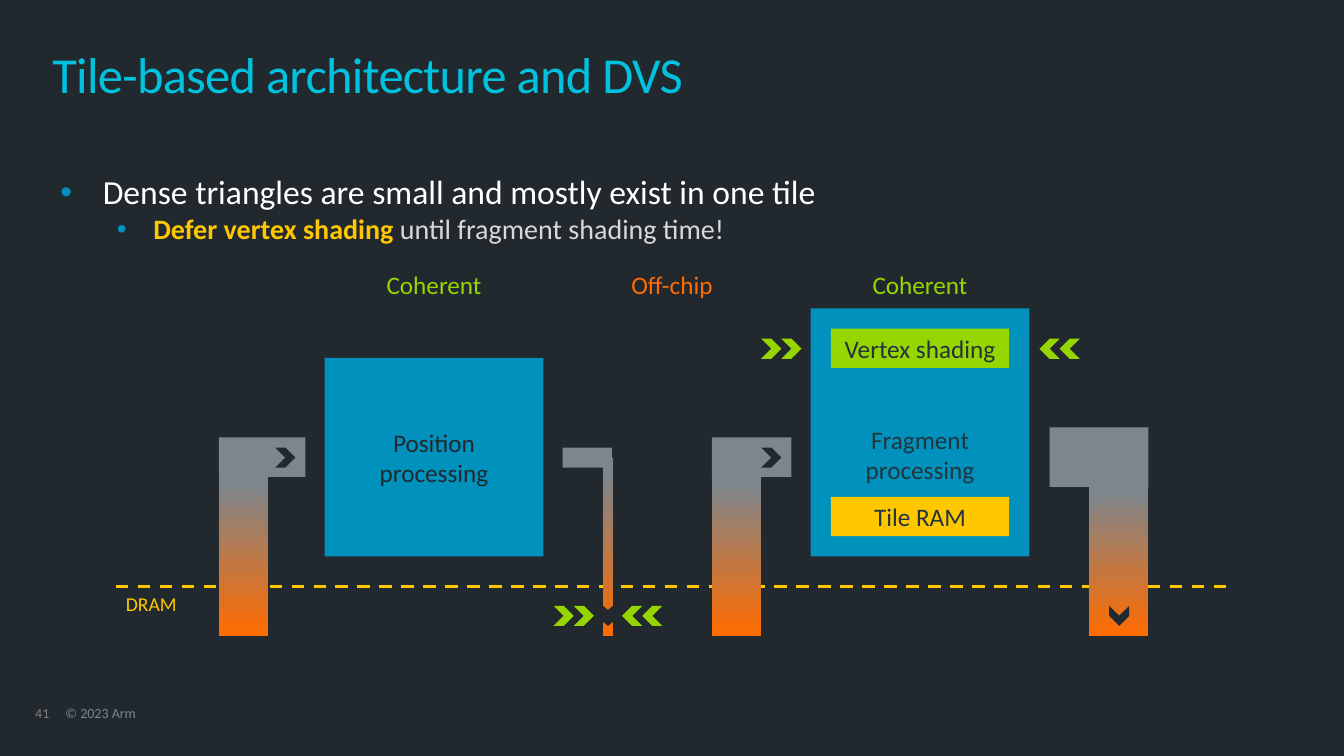
from dataclasses import dataclass

from lxml import etree
from pptx import Presentation
from pptx import util as u
from pptx.dml.color import RGBColor
from pptx.enum import dml, shapes, text
from pptx.oxml import ns

COLORS = {
    "background": "21292F", "ink": "23353C", "title": "00C1DE", "blue": "0091BD",
    "green": "95D600", "orange": "FF6B00", "yellow": "FFC700", "gray": "7D868C",
    "number": "7F7F7F", "white": "FFFFFF", "light": "D9D9D9",
}
FONT = "Calibri"
SHAPE = shapes.MSO_SHAPE
CHEVRON = 0.2


@dataclass
class Block:
    left: float
    top: float
    width: float
    height: float
    fill: str
    label: str = ""
    color: str = "ink"
    inset_top: float = 0.05
    inset_bottom: float = 0.05


@dataclass
class Label:
    left: float
    top: float
    width: float
    height: float
    label: str
    color: str
    size: float = 18
    centered: bool = True
    inset: bool = True


@dataclass
class Chevron:
    left: float
    top: float
    color: str
    rotation: float = 0
    width: float = CHEVRON
    height: float = CHEVRON
    point: float = 0.5


def rgb(name: str) -> RGBColor:
    return RGBColor.from_string(COLORS[name])


def style(r, size: float, color: str, bold: bool = False) -> None:
    r.font.name = FONT
    r.font.size = u.Pt(size)
    r.font.bold = bold
    r.font.color.rgb = rgb(color)


def set_insets(tf, left=0.0, top=0.0, right=0.0, bottom=0.0) -> None:
    tf.margin_left, tf.margin_top = u.Inches(left), u.Inches(top)
    tf.margin_right, tf.margin_bottom = u.Inches(right), u.Inches(bottom)


def place(sp, left: float, top: float, width: float, height: float) -> None:
    sp.left, sp.top = u.Inches(left), u.Inches(top)
    sp.width, sp.height = u.Inches(width), u.Inches(height)


def add_shape(s, kind, left: float, top: float, width: float, height: float):
    sp = s.shapes.add_shape(kind, *map(u.Inches, (left, top, width, height)))
    sp.shadow.inherit = False
    sp.line.fill.background()
    return sp


def add_block(s, b: Block) -> None:
    sp = add_shape(s, SHAPE.RECTANGLE, b.left, b.top, b.width, b.height)
    sp.fill.solid()
    sp.fill.fore_color.rgb = rgb(b.fill)
    if b.label:
        tf = sp.text_frame
        tf.text = b.label
        tf.word_wrap = True
        tf.vertical_anchor = text.MSO_ANCHOR.MIDDLE
        set_insets(tf, 0.1, b.inset_top, 0.1, b.inset_bottom)
        p = tf.paragraphs[0]
        p.alignment = text.PP_ALIGN.CENTER
        for r in p.runs:
            style(r, 18, b.color)


def add_pipe(s, left: float, top: float, width: float, height: float) -> None:
    sp = add_shape(s, SHAPE.RECTANGLE, left, top, width, height)
    sp.fill.gradient()
    sp.fill.gradient_angle = 270
    stops = ((0.1, "gray"), (1, "orange"))
    for stop, (position, color) in zip(sp.fill.gradient_stops, stops):
        stop.position = position
        stop.color.rgb = rgb(color)


def add_chevron(s, c: Chevron) -> None:
    sp = add_shape(s, SHAPE.CHEVRON, c.left, c.top, c.width, c.height)
    sp.adjustments[0] = c.point
    sp.rotation = c.rotation
    sp.fill.solid()
    sp.fill.fore_color.rgb = rgb(c.color)


def add_label(s, item: Label) -> None:
    sp = s.shapes.add_textbox(0, 0, 0, 0)
    place(sp, item.left, item.top, item.width, item.height)
    tf = sp.text_frame
    tf.text = item.label
    tf.word_wrap = True
    if not item.inset:
        set_insets(tf)
    p = tf.paragraphs[0]
    if item.centered:
        tf.vertical_anchor = text.MSO_ANCHOR.MIDDLE
        p.alignment = text.PP_ALIGN.CENTER
    if not item.inset:
        p.line_spacing = 0.9
    style(p.runs[0], item.size, item.color)


def set_bullet(p, level: int, margin: float, indent: float) -> None:
    p.level = level
    p.space_before = u.Pt(0)
    pPr = p._p.get_or_add_pPr()
    pPr.set("marL", str(u.Inches(margin)))
    pPr.set("indent", str(u.Inches(indent)))
    color = etree.SubElement(pPr, ns.qn("a:buClr"))
    etree.SubElement(color, ns.qn("a:srgbClr"), val=COLORS["blue"])
    etree.SubElement(pPr, ns.qn("a:buFont"), typeface="Arial")
    etree.SubElement(pPr, ns.qn("a:buChar"), char="•")


def add_title(s) -> None:
    sp = s.shapes.title
    place(sp, 0.52, 0.52, 12.28, 0.57)
    tf = sp.text_frame
    tf.text = "Tile-based architecture and DVS"
    tf.auto_size = text.MSO_AUTO_SIZE.NONE
    tf.vertical_anchor = text.MSO_ANCHOR.TOP
    set_insets(tf)
    p = tf.paragraphs[0]
    p.alignment = text.PP_ALIGN.LEFT
    p.line_spacing = 0.85
    style(p.runs[0], 36, "title")
    p.runs[0].font._element.set("spc", "-50")


def add_body(s) -> None:
    sp = s.placeholders[1]
    place(sp, 0.52, 1.7, 12.28, 4.99)
    tf = sp.text_frame
    tf.text = "Dense triangles are small and mostly exist in one tile"
    tf.auto_size = text.MSO_AUTO_SIZE.NONE
    set_insets(tf)
    set_bullet(tf.paragraphs[0], 0, 0.5, -0.42)
    style(tf.paragraphs[0].runs[0], 24, "white")
    p = tf.add_paragraph()
    set_bullet(p, 1, 1, -0.36)
    for words, color, bold in (("Defer vertex shading", "yellow", True),
                               (" until fragment shading time!", "light", False)):
        r = p.add_run()
        r.text = words
        style(r, 20, color, bold)


def add_dram_line(s) -> None:
    ends = map(u.Inches, (1.15, 5.82, 12.18, 5.82))
    line = s.shapes.add_connector(shapes.MSO_CONNECTOR.STRAIGHT, *ends)
    line.line.color.rgb = rgb("yellow")
    line.line.width = u.Pt(2.25)
    line.line.dash_style = dml.MSO_LINE.DASH
    etree.SubElement(line._element.spPr, ns.qn("a:effectLst"))


LABELS = [
    Label(0.35, 7.01, 0.34, 0.15, "41", "number", 10, False, False),
    Label(0.65, 7.01, 5.07, 0.15, "© 2023 Arm", "gray", 10, False, False),
    Label(3.22, 2.67, 2.17, 0.31, "Coherent", "green"),
    Label(5.88, 2.67, 1.57, 0.31, "Off-chip", "orange"),
    Label(8.04, 2.67, 2.17, 0.31, "Coherent", "green"),
    Label(1.15, 5.82, 0.79, 0.34, "DRAM", "yellow", 14, False),
]
# Vertical pipes to and from memory: left, top, width, height
PIPES = [(2.17, 4.64, 0.49, 1.67), (5.98, 4.54, 0.1, 1.77),
         (7.06, 4.64, 0.49, 1.67), (10.8, 4.73, 0.59, 1.58)]
BLOCKS = [
    Block(3.22, 3.55, 2.17, 1.97, "blue", "Position\vprocessing", "background", 0.16, 0.16),
    Block(8.04, 3.06, 2.17, 2.46, "blue", "Fragment\vprocessing", "ink", 0.59, 0.16),
    Block(8.24, 3.26, 1.77, 0.39, "green", "Vertex shading"),
    Block(8.24, 4.93, 1.77, 0.39, "yellow", "Tile RAM"),
    Block(2.17, 4.34, 0.86, 0.39, "gray"),
    Block(5.58, 4.44, 0.49, 0.2, "gray"),
    Block(7.06, 4.34, 0.79, 0.39, "gray"),
    Block(10.41, 4.24, 0.98, 0.59, "gray"),
]
FLOW_CHEVRONS = [
    Chevron(2.73, 4.44, "background"),
    Chevron(7.55, 4.44, "background"),
    Chevron(11, 6.01, "background", 90),
    Chevron(5.93, 6.06, "background", 90, 0.2, 0.1, 0.42),
]
# Green pairs that squeeze a stage: left, top, rotation
GREEN_PAIRS = [(7.55, 3.36, 0), (10.31, 3.36, 180), (5.49, 6.01, 0), (6.17, 6.01, 180)]


def main() -> None:
    prs = Presentation()
    prs.slide_width, prs.slide_height = u.Inches(13.33), u.Inches(7.5)
    s = prs.slides.add_slide(prs.slide_layouts[1])
    s.background.fill.solid()
    s.background.fill.fore_color.rgb = rgb("background")

    # Title and list
    add_title(s)
    add_body(s)

    # Diagram
    add_dram_line(s)
    for pipe in PIPES:
        add_pipe(s, *pipe)
    for block in BLOCKS:
        add_block(s, block)
    for chevron in FLOW_CHEVRONS:
        add_chevron(s, chevron)
    for left, top, rotation in GREEN_PAIRS:
        for i in range(2):
            add_chevron(s, Chevron(left + i * CHEVRON, top, "green", rotation))

    # Captions and footer
    for label in LABELS:
        add_label(s, label)
    prs.save("out.pptx")


if __name__ == "__main__":
    main()
